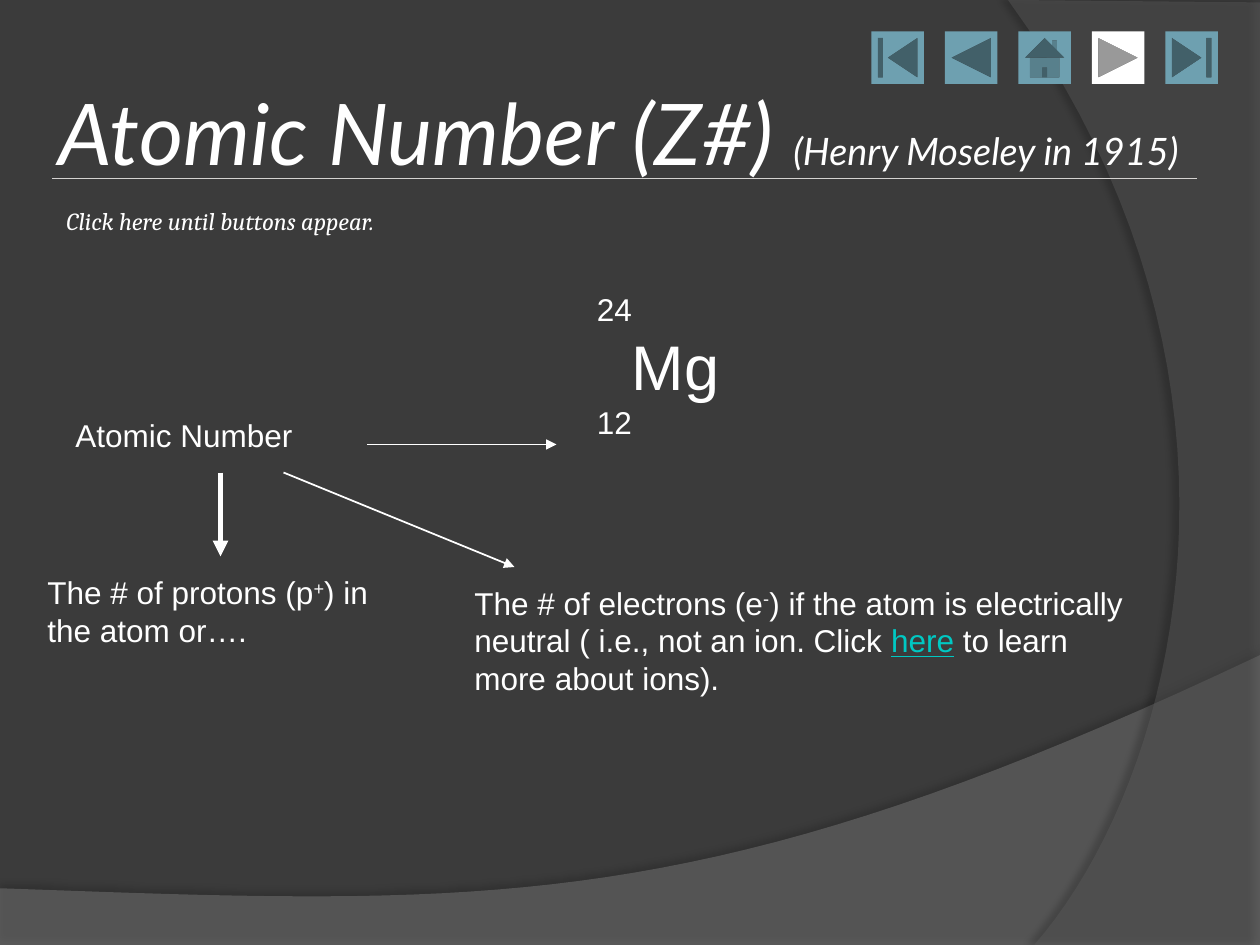
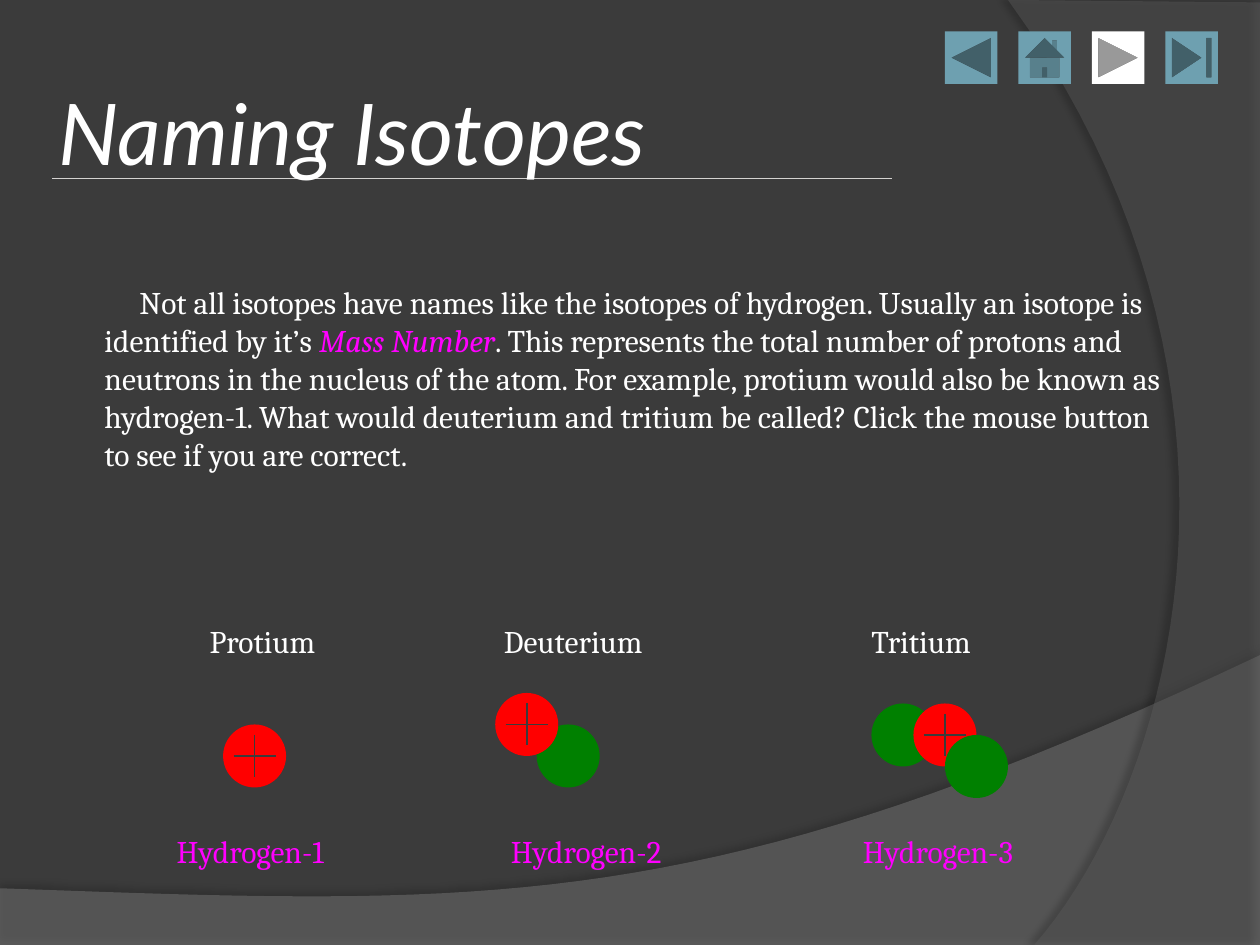
from dataclasses import dataclass
from typing import NamedTuple

from pptx import Presentation
from pptx.dml.color import RGBColor
from pptx.enum.shapes import MSO_CONNECTOR, MSO_SHAPE
from pptx.enum.text import MSO_ANCHOR, PP_ALIGN
from pptx.oxml.ns import qn
from pptx.oxml.xmlchemy import OxmlElement
from pptx.util import Pt

STRAIGHT = MSO_CONNECTOR.STRAIGHT
ELLIPSE = MSO_SHAPE.OVAL
BEGINNING = MSO_SHAPE.ACTION_BUTTON_BEGINNING
BACK = MSO_SHAPE.ACTION_BUTTON_BACK_OR_PREVIOUS
HOME = MSO_SHAPE.ACTION_BUTTON_HOME
FORWARD = MSO_SHAPE.ACTION_BUTTON_FORWARD_OR_NEXT
END = MSO_SHAPE.ACTION_BUTTON_END
LEFT, CENTER = PP_ALIGN.LEFT, PP_ALIGN.CENTER
TOP, MIDDLE = MSO_ANCHOR.TOP, MSO_ANCHOR.MIDDLE

BACKGROUND = "3B3B3B"
WHITE = "FFFFFF"
RULE = "D4D2D0"
BUTTON = "6EA0B0"
LINK = "00C8C3"
MAGENTA = "FF00FF"
RED = "FF0000"
GREEN = "008000"
SANS, SERIF, TITLE_FONT = "Arial", "Cambria", "Lato"

BUTTON_ORDER = [BEGINNING, BACK, HOME, FORWARD, END]
BUTTON_LEFT, BUTTON_TOP, BUTTON_SIZE, BUTTON_STEP = 498, 18, 30, 42
NUCLEON_RADIUS, PLUS_ARM = 18, 12
CURVE_STEPS = 40

Point = tuple[float, float]


class Box(NamedTuple):
    left: float
    top: float
    width: float
    height: float


@dataclass
class Run:
    text: str
    size: float = 18
    font: str = SANS
    color: str = WHITE
    italic: bool = False
    underline: bool = False
    baseline: int = 0


@dataclass
class Line:
    runs: list[Run]
    margin: float = 0
    indent: float = 0


@dataclass
class Band:
    color: str
    opacity: int
    corners: list[Point]
    curve: list[Point]
    shadow_opacity: int
    shadow_distance: float
    shadow_angle: int


class Arrow(NamedTuple):
    start: Point
    end: Point
    width: float


class Nucleon(NamedTuple):
    x: float
    y: float
    is_proton: bool


class Isotope(NamedTuple):
    name: str
    name_center: float
    mass_name: str
    mass_center: float
    nucleons: list[Nucleon]


BANDS = [
    Band("7F7F7F", 45, [(0, 540), (720, 540)],
         [(720, 374.4), (402.5, 524.9), (281.5, 517.7), (0, 507.6)], 35, 3.5, 270),
    Band("5E5E5E", 40, [(720, 1.4), (720, 540)],
         [(591, 540), (673.2, 445.7), (733, 216), (576, 0)], 45, 4, 180),
]

ARROWS = [
    Arrow((210, 254), (318, 254), 0.75),
    Arrow((126, 270), (126, 318), 3),
    Arrow((162, 270), (294, 324), 1),
]

ISOTOPES = [
    Isotope("Protium", 150, "Hydrogen-1", 143, [Nucleon(145.5, 432, True)]),
    Isotope("Deuterium", 327.6, "Hydrogen-2", 335,
            [Nucleon(324.7, 432, False), Nucleon(301, 414, True)]),
    Isotope("Tritium", 526.3, "Hydrogen-3", 536,
            [Nucleon(516, 420, False), Nucleon(540, 420, True), Nucleon(558, 438, False)]),
]


def rgb(color: str) -> RGBColor:
    return RGBColor.from_string(color)


def fill_shape(shape, color: str) -> None:
    shape.shadow.inherit = False
    shape.fill.solid()
    shape.fill.fore_color.rgb = rgb(color)
    shape.line.fill.background()


def add_child(parent, tag: str, **attributes):
    child = OxmlElement(tag)
    for name, value in attributes.items():
        child.set(name, str(value))
    parent.append(child)
    return child


def curve_points(controls: list[Point]) -> list[Point]:
    points = []
    for step in range(CURVE_STEPS + 1):
        t = step / CURVE_STEPS
        weights = ((1 - t) ** 3, 3 * t * (1 - t) ** 2, 3 * t * t * (1 - t), t ** 3)
        points.append((sum(w * x for w, (x, _) in zip(weights, controls)),
                       sum(w * y for w, (_, y) in zip(weights, controls))))
    return points


def add_band(slide, band: Band) -> None:
    outline = [(Pt(x), Pt(y)) for x, y in band.corners + curve_points(band.curve)]
    builder = slide.shapes.build_freeform(*outline[0], scale=1.0)
    builder.add_line_segments(outline[1:], close=True)
    shape = builder.convert_to_shape()
    fill_shape(shape, band.color)
    properties = shape._element.spPr
    fill_color = properties.find(qn("a:solidFill")).find(qn("a:srgbClr"))
    add_child(fill_color, "a:alpha", val=band.opacity * 1000)
    shadow = add_child(properties.find(qn("a:effectLst")), "a:outerShdw", blurRad=Pt(4),
                       dist=Pt(band.shadow_distance), dir=band.shadow_angle * 60000,
                       algn="ctr", rotWithShape=0)
    shadow_color = add_child(shadow, "a:srgbClr", val="000000")
    add_child(shadow_color, "a:alpha", val=band.shadow_opacity * 1000)


def add_line(slide, start: Point, end: Point, color: str, width: float,
             arrowhead: bool = False) -> None:
    connector = slide.shapes.add_connector(STRAIGHT, *map(Pt, start + end))
    connector.line.color.rgb = rgb(color)
    connector.line.width = Pt(width)
    if arrowhead:
        add_child(connector.line._get_or_add_ln(), "a:tailEnd", type="triangle")
    add_child(connector._element.spPr, "a:effectLst")


def add_text(slide, box: Box, lines: list[Line], align=LEFT, anchor=TOP,
             inset: float = 7.2) -> None:
    shape = slide.shapes.add_textbox(*map(Pt, box))
    text_frame = shape.text_frame
    text_frame.word_wrap = align == LEFT
    text_frame.vertical_anchor = anchor
    text_frame.margin_left = text_frame.margin_right = Pt(inset)
    text_frame.margin_top = text_frame.margin_bottom = Pt(3.6)
    for index, line in enumerate(lines):
        paragraph = text_frame.add_paragraph() if index else text_frame.paragraphs[0]
        paragraph.alignment = align
        properties = paragraph._p.get_or_add_pPr()
        properties.set("marL", str(Pt(line.margin)))
        properties.set("indent", str(Pt(line.indent)))
        for item in line.runs:
            run = paragraph.add_run()
            run.text = item.text
            font = run.font
            font.name = item.font
            font.size = Pt(item.size)
            font.italic = item.italic
            font.underline = item.underline
            font.color.rgb = rgb(item.color)
            if item.baseline:
                font._element.set("baseline", str(item.baseline * 1000))


def add_label(slide, center: float, top: float, text: str, color: str) -> None:
    add_text(slide, Box(center - 65, top, 130, 36), [Line([Run(text, font=SERIF, color=color)])],
             CENTER, MIDDLE)


def add_buttons(slide, buttons: list) -> None:
    for button in buttons:
        left = BUTTON_LEFT + BUTTON_STEP * BUTTON_ORDER.index(button)
        shape = slide.shapes.add_shape(button, Pt(left), Pt(BUTTON_TOP),
                                       Pt(BUTTON_SIZE), Pt(BUTTON_SIZE))
        fill_shape(shape, WHITE if button == FORWARD else BUTTON)


def add_base_slide(presentation, title: str, subtitle: str, rule_end: float, buttons: list):
    slide = presentation.slides.add_slide(presentation.slide_layouts[6])
    slide.background.fill.solid()
    slide.background.fill.fore_color.rgb = rgb(BACKGROUND)
    for band in BANDS:
        add_band(slide, band)
    add_line(slide, (30, 102), (rule_end, 102), RULE, 1)
    runs = [Run(title, 48.6, TITLE_FONT, italic=True)]
    if subtitle:
        runs.append(Run(subtitle, 21.6, TITLE_FONT, italic=True))
    add_text(slide, Box(30, 48, 690, 54), [Line(runs)], anchor=MIDDLE, inset=3.6)
    add_buttons(slide, buttons)
    return slide


def add_nucleon(slide, nucleon: Nucleon) -> None:
    x, y, is_proton = nucleon
    shape = slide.shapes.add_shape(ELLIPSE, Pt(x - NUCLEON_RADIUS), Pt(y - NUCLEON_RADIUS),
                                   Pt(2 * NUCLEON_RADIUS), Pt(2 * NUCLEON_RADIUS))
    fill_shape(shape, RED if is_proton else GREEN)
    if is_proton:
        add_line(slide, (x, y - PLUS_ARM), (x, y + PLUS_ARM), BACKGROUND, 1)
        add_line(slide, (x - PLUS_ARM, y), (x + PLUS_ARM, y), BACKGROUND, 1)


def build_atomic_number(presentation) -> None:
    slide = add_base_slide(presentation, "Atomic Number (Z#) ", "(Henry Moseley in 1915)",
                           684, BUTTON_ORDER)
    add_text(slide, Box(324, 162, 101, 108), [
        Line([Run("24")], margin=10),
        Line([Run("Mg", 36)], margin=30),
        Line([Run("12")], margin=10),
    ])
    add_text(slide, Box(36, 234, 171, 36), [Line([Run("Atomic Number")])])
    add_text(slide, Box(20, 324, 226, 65), [Line([
        Run("The # of protons (p"), Run("+", baseline=30), Run(") in the atom or….")])])
    add_text(slide, Box(264, 330, 390, 94), [Line([
        Run("The # of electrons (e"), Run("-", baseline=30),
        Run(") if the atom is electrically neutral ( i.e., not an ion. Click "),
        Run("here", color=LINK, underline=True),
        Run(" to learn more about ions).")])])
    add_text(slide, Box(29.5, 114, 193, 24),
             [Line([Run("Click here until buttons appear.", 14, SERIF, italic=True)])],
             CENTER, MIDDLE)
    for arrow in ARROWS:
        add_line(slide, arrow.start, arrow.end, WHITE, arrow.width, arrowhead=True)


def build_naming_isotopes(presentation) -> None:
    slide = add_base_slide(presentation, "Naming Isotopes", "", 510, BUTTON_ORDER[1:])
    add_text(slide, Box(52.6, 126, 625, 180), [Line([
        Run("Not all isotopes have names like the isotopes of hydrogen. Usually an isotope "
            "is identified by it’s ", font=SERIF),
        Run("Mass Number", font=SERIF, color=MAGENTA, italic=True),
        Run(". This represents the total number of protons and neutrons in the nucleus of "
            "the atom. For example, protium would also be known as hydrogen-1. What would "
            "deuterium and tritium be called? Click the mouse button to see if you are "
            "correct.", font=SERIF)], indent=20)], anchor=MIDDLE)
    for isotope in ISOTOPES:
        add_label(slide, isotope.name_center, 348, isotope.name, WHITE)
        add_label(slide, isotope.mass_center, 468, isotope.mass_name, MAGENTA)
        for nucleon in isotope.nucleons:
            add_nucleon(slide, nucleon)


def main() -> None:
    presentation = Presentation()
    presentation.slide_width = Pt(720)
    presentation.slide_height = Pt(540)
    build_atomic_number(presentation)
    build_naming_isotopes(presentation)
    presentation.save("out.pptx")


if __name__ == "__main__":
    main()
